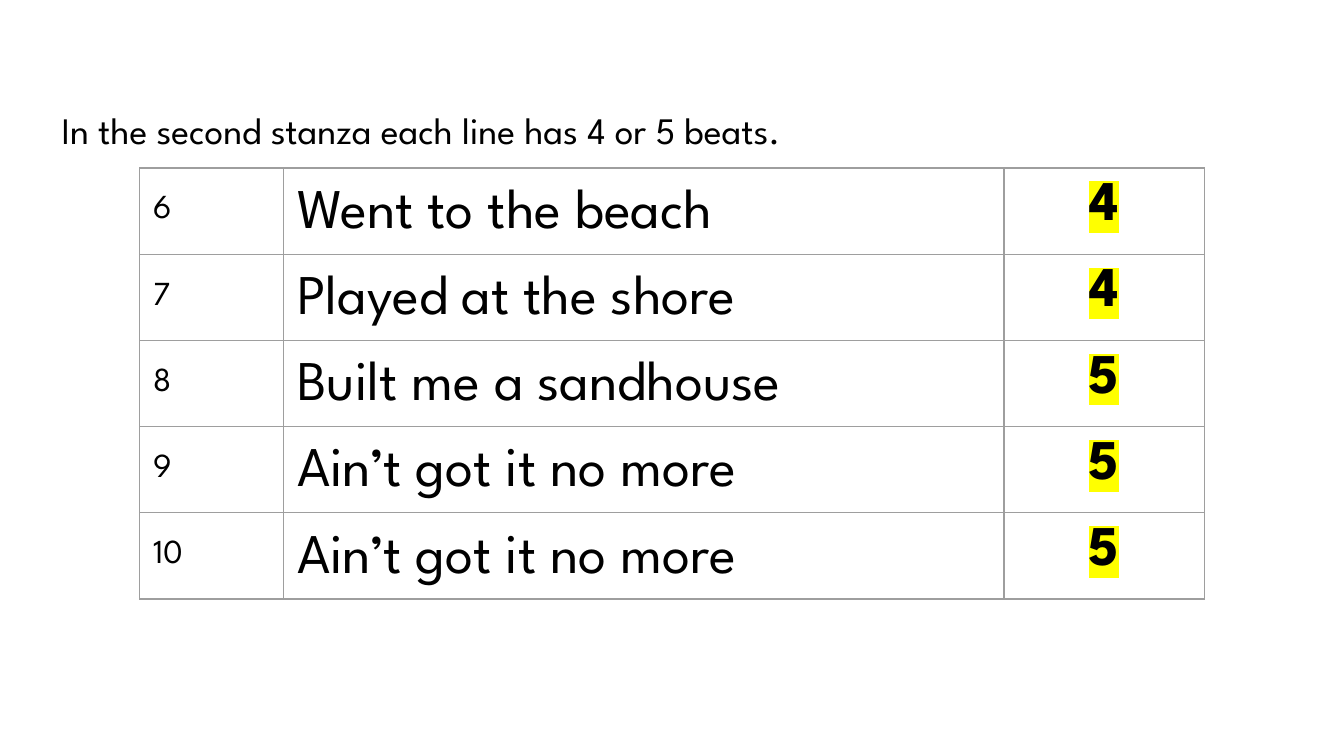
from lxml import etree
from pptx import Presentation
from pptx.dml.color import RGBColor
from pptx.enum.text import PP_ALIGN
from pptx.oxml.ns import qn
from pptx.util import Inches, Pt

LEFT, CENTER = PP_ALIGN.LEFT, PP_ALIGN.CENTER
BLACK = RGBColor(0, 0, 0)
WHITE = RGBColor(255, 255, 255)
GRAY = RGBColor(0x9E, 0x9E, 0x9E)
YELLOW = RGBColor(255, 255, 0)
FONT = "League Spartan"

INTRO = "In the second stanza each line has 4 or 5 beats."
FIRST_LINE = 6
STANZA = [
    ("Went to the beach", 4),
    ("Played at the shore", 4),
    ("Built me a sandhouse", 5),
    ("Ain’t got it no more", 5),
    ("Ain’t got it no more", 5),
]
COLUMNS = [
    {"width": 1.07, "size": 18, "top": 0.17, "spacing": 1.15, "align": LEFT, "beats": False},
    {"width": 5.36, "size": 30, "top": 0.1, "spacing": 1.15, "align": LEFT, "beats": False},
    {"width": 1.49, "size": 30, "top": 0.1, "spacing": 1, "align": CENTER, "beats": True},
]
TABLE_LEFT, TABLE_TOP, ROW_HEIGHT = 1.04, 1.25, 0.64
MARGIN = Inches(0.1)


def add_color(parent, tag, color):
    element = etree.SubElement(parent, qn(tag))
    etree.SubElement(element, qn("a:srgbClr"), val=str(color))


def write(frame, text, size, spacing, align=LEFT, bold=False):
    paragraph = frame.paragraphs[0]
    run = paragraph.add_run()
    run.text = text
    paragraph.alignment = align
    paragraph.line_spacing = spacing
    font = paragraph.font
    font.name, font.size, font.bold = FONT, Pt(size), bold
    font.color.rgb = BLACK
    return run


def set_margins(box, top=MARGIN):
    box.margin_left = box.margin_right = box.margin_bottom = MARGIN
    box.margin_top = top


def add_borders(cell):
    properties = cell._tc.get_or_add_tcPr()
    for side in ("L", "R", "T", "B"):
        line = etree.SubElement(properties, qn(f"a:ln{side}"), w=str(Pt(0.75)))
        add_color(line, "a:solidFill", GRAY)


def fill_cell(cell, text, column):
    set_margins(cell, Inches(column["top"]))
    add_borders(cell)
    cell.fill.solid()
    cell.fill.fore_color.rgb = WHITE
    run = write(cell.text_frame, text, column["size"], column["spacing"],
                column["align"], column["beats"])
    if column["beats"]:
        add_color(run._r.get_or_add_rPr(), "a:highlight", YELLOW)


presentation = Presentation()
presentation.slide_width = Inches(10)
presentation.slide_height = Inches(10) * 9 // 16
slide = presentation.slides.add_slide(presentation.slide_layouts[6])

table = slide.shapes.add_table(
    len(STANZA), len(COLUMNS), Inches(TABLE_LEFT), Inches(TABLE_TOP),
    Inches(sum(column["width"] for column in COLUMNS)),
    Inches(ROW_HEIGHT * len(STANZA))).table
table.first_row = table.horz_banding = False
for table_column, column in zip(table.columns, COLUMNS):
    table_column.width = Inches(column["width"])
for row_index, (line, beats) in enumerate(STANZA):
    table.rows[row_index].height = Inches(ROW_HEIGHT)
    values = (str(FIRST_LINE + row_index), line, str(beats))
    for column_index, (value, column) in enumerate(zip(values, COLUMNS)):
        fill_cell(table.cell(row_index, column_index), value, column)

intro = slide.shapes.add_textbox(Inches(0.36), Inches(0.65), Inches(9.28), Inches(0.54))
intro.text_frame.word_wrap = True
set_margins(intro.text_frame)
write(intro.text_frame, INTRO, 20, 1.15)

presentation.save("out.pptx")
